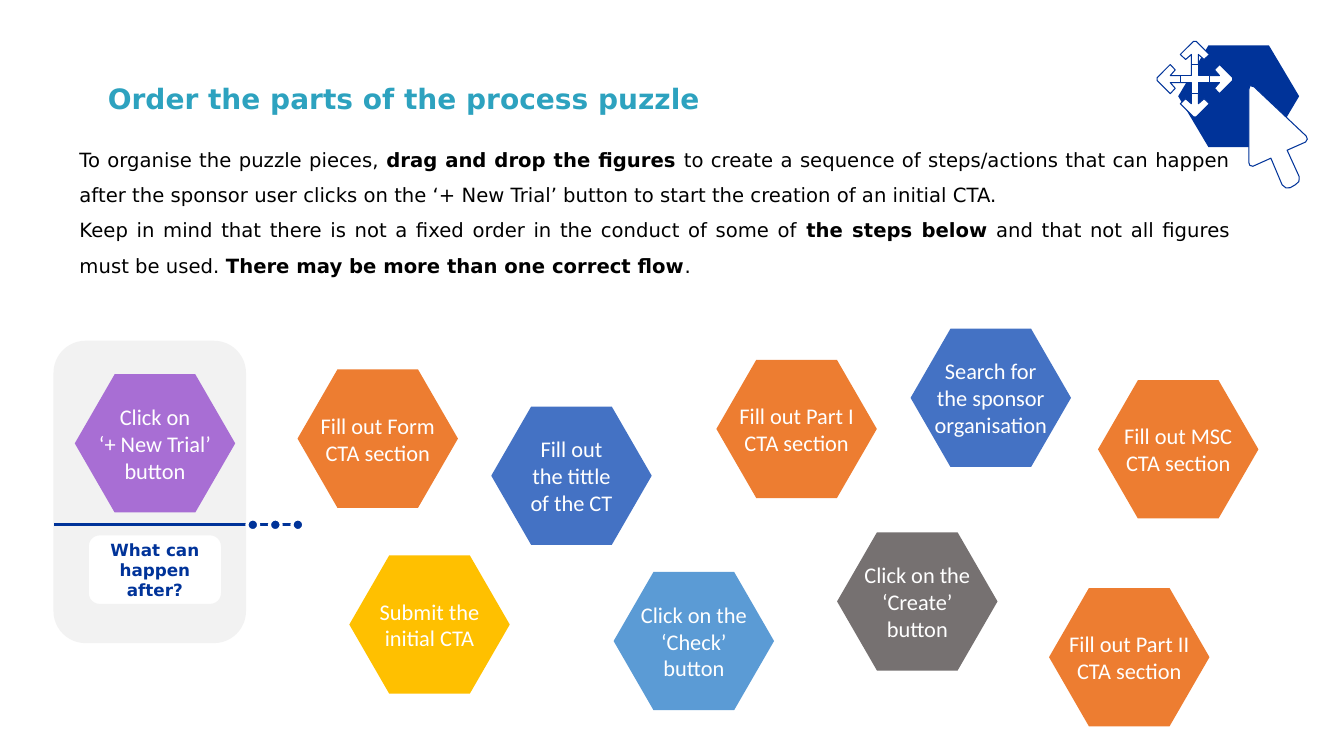
from pptx import Presentation
from pptx.dml.color import RGBColor
from pptx.enum.shapes import MSO_CONNECTOR as Connector, MSO_SHAPE as Preset
from pptx.enum.text import MSO_ANCHOR as Anchor, MSO_AUTO_SIZE as AutoSize, PP_ALIGN as Align
from pptx.oxml.ns import qn
from pptx.util import Pt
from lxml.etree import SubElement

BLACK = RGBColor(0x00, 0x00, 0x00)
WHITE = RGBColor(0xFF, 0xFF, 0xFF)
PALE = RGBColor(0xF2, 0xF2, 0xF2)
TEAL = RGBColor(0x2D, 0xA2, 0xBF)
NAVY = RGBColor(0x00, 0x33, 0x99)
ORANGE = RGBColor(0xED, 0x7D, 0x31)
BLUE = RGBColor(0x44, 0x72, 0xC4)
SKY = RGBColor(0x5B, 0x9B, 0xD5)
GOLD = RGBColor(0xFF, 0xC0, 0x00)
GREY = RGBColor(0x76, 0x71, 0x71)
PURPLE = RGBColor(0xA8, 0x6E, 0xD4)

HEADING_FONT = "DejaVu Sans"
STEP_FONT = "Calibri"
STEP_WIDTH, STEP_HEIGHT, STEP_SLOPE = 114.6, 98.8, 28.5

INSTRUCTIONS = [
    [("To organise the puzzle pieces, ", False),
     ("drag and drop the figures ", True),
     ("to create a sequence of steps/actions that can happen after the sponsor user "
      "clicks on the ‘+ New Trial’ button to start the creation of an initial CTA. ", False)],
    [("Keep in mind that there is not a fixed order in the conduct of some of ", False),
     ("the steps below", True),
     (" and that not all figures must be used. ", False),
     ("There may be more than one correct flow", True),
     (".", False)],
]

STEPS = [
    (438.3, 408.5, SKY, "Click on the ‘Check’\nbutton"),
    (511.7, 257, ORANGE, "Fill out Part I CTA section"),
    (249.5, 396.7, GOLD, "Submit the initial CTA"),
    (350.9, 290.4, BLUE, "Fill out\nthe tittle\nof the CT"),
    (597.9, 380.2, GREY, "Click on the ‘Create’\nbutton"),
    (749.3, 420, ORANGE, "Fill out Part II CTA section"),
    (53.4, 267.3, PURPLE, "Click on\n‘+ New Trial’ button"),
    (784.3, 271.6, ORANGE, "Fill out MSC CTA section"),
    (212.5, 263.9, ORANGE, "Fill out Form CTA section"),
    (650.4, 234.8, BLUE, "Search for\nthe sponsor organisation"),
]


def style_font(font, name, size, color, bold=False):
    font.name, font.size, font.bold = name, Pt(size), bold
    font.color.rgb = color


def paint(shape, fill, line=None, line_width=0):
    shape.shadow.inherit = False
    shape.fill.solid()
    shape.fill.fore_color.rgb = fill
    if line is None:
        shape.line.fill.background()
    else:
        shape.line.color.rgb = line
        shape.line.width = Pt(line_width)


def write_centred(shape, text, font_name, size, color, bold=False):
    frame = shape.text_frame
    frame.text = text
    frame.word_wrap = True
    frame.vertical_anchor = Anchor.MIDDLE
    for paragraph in frame.paragraphs:
        paragraph.alignment = Align.CENTER
        for run in paragraph.runs:
            style_font(run.font, font_name, size, color, bold)


def add_outline(shapes, left, top, corners):
    points = [(Pt(left + x), Pt(top + y)) for x, y in corners]
    builder = shapes.build_freeform(*points[0])
    builder.add_line_segments(points[1:], close=True)
    return builder.convert_to_shape()


def hexagon(width, height, slope):
    return [(slope, 0), (width - slope, 0), (width, height / 2),
            (width - slope, height), (slope, height), (0, height / 2)]


def four_arms(arm):
    corners = []
    for _ in range(4):
        corners += arm
        arm = [(-y, x) for x, y in arm]
    return corners


def add_title(slide, left, top, width, height):
    title = slide.shapes.title
    title.left, title.top, title.width, title.height = Pt(left), Pt(top), Pt(width), Pt(height)
    frame = title.text_frame
    frame.text = "Order the parts of the process puzzle"
    frame.word_wrap = True
    frame.auto_size = AutoSize.NONE
    frame.vertical_anchor = Anchor.TOP
    frame.paragraphs[0].alignment = Align.LEFT
    style_font(frame.paragraphs[0].runs[0].font, HEADING_FONT, 20, TEAL, True)


def add_instructions(slide, left, top, width, height):
    frame = slide.shapes.add_textbox(Pt(left), Pt(top), Pt(width), Pt(height)).text_frame
    frame.word_wrap = True
    for index, pieces in enumerate(INSTRUCTIONS):
        paragraph = frame.add_paragraph() if index else frame.paragraphs[0]
        paragraph.alignment = Align.JUSTIFY
        paragraph.line_spacing = 1.5
        for text, bold in pieces:
            run = paragraph.add_run()
            run.text = text
            style_font(run.font, HEADING_FONT, 14, BLACK, bold)


def add_start_panel(slide, left, top, width, height):
    shapes = slide.shapes
    panel = shapes.add_shape(Preset.ROUNDED_RECTANGLE, Pt(left), Pt(top), Pt(width), Pt(height))
    paint(panel, PALE)

    flow_y = top + 131.5
    flow = shapes.add_connector(Connector.STRAIGHT, Pt(left + 0.5), Pt(flow_y),
                                Pt(left + width + 36), Pt(flow_y))
    flow.line.color.rgb = NAVY
    flow.line.width = Pt(2.25)
    SubElement(flow._element.spPr, qn("a:effectLst"))

    dot_size, dot_pitch = 8.4, 16.1
    for index in range(3):
        dot = shapes.add_shape(Preset.OVAL, Pt(left + width + 0.7 + index * dot_pitch),
                               Pt(flow_y - dot_size / 2), Pt(dot_size), Pt(dot_size))
        paint(dot, NAVY, WHITE, 2.25)

    question = shapes.add_shape(Preset.ROUNDED_RECTANGLE, Pt(left + 24.7), Pt(top + 138.5),
                                Pt(95.5), Pt(50))
    paint(question, WHITE, PALE, 1)
    write_centred(question, "What can happen after?", HEADING_FONT, 12, NAVY, True)


def add_drag_icon(slide, left, top):
    shapes = slide.shapes.add_group_shape().shapes
    paint(add_outline(shapes, left + 15.8, top + 2.9, hexagon(86.4, 72.7, 21.6)), NAVY)

    centre_x, centre_y = left + 27.7, top + 27
    arrow_arm = [(-2.5, -2.5), (-2.5, -17.6), (-6.6, -14), (-10.4, -17.6), (-1, -27),
                 (1, -27), (10.4, -17.6), (6.6, -14), (2.5, -17.6)]
    plus_arm = [(-2.7, -2.7), (-2.7, -10.3), (2.7, -10.3)]
    for arm in (arrow_arm, plus_arm):
        paint(add_outline(shapes, centre_x, centre_y, four_arms(arm)), WHITE, NAVY)

    pointer = [(0.8, 0), (3.6, 0.7), (41, 36), (41.8, 38.2), (40.5, 40.3), (27.4, 46.1),
               (36, 65), (35.8, 68.5), (33.2, 70.8), (29.6, 72.9), (26.5, 73),
               (23.8, 70.8), (15.8, 51.8), (2.9, 57.6), (0.7, 56.9), (0, 54.7), (0, 2.9)]
    paint(add_outline(shapes, left + 66.2, top + 31.7, pointer), WHITE, NAVY, 0.75)


def add_step(slide, left, top, color, text):
    step = add_outline(slide.shapes, left, top, hexagon(STEP_WIDTH, STEP_HEIGHT, STEP_SLOPE))
    paint(step, color)
    write_centred(step, text, STEP_FONT, 16, WHITE)


def main():
    deck = Presentation()
    deck.slide_width, deck.slide_height = Pt(960), Pt(540)
    slide = deck.slides.add_slide(deck.slide_layouts[5])
    add_start_panel(slide, 38.2, 243.4, 137.5, 216)
    add_title(slide, 69.8, 54.7, 485.3, 31.7)
    add_instructions(slide, 49.7, 93.6, 835.9, 108.7)
    add_drag_icon(slide, 825.8, 29.5)
    for step in STEPS:
        add_step(slide, *step)
    deck.save("out.pptx")


if __name__ == "__main__":
    main()
